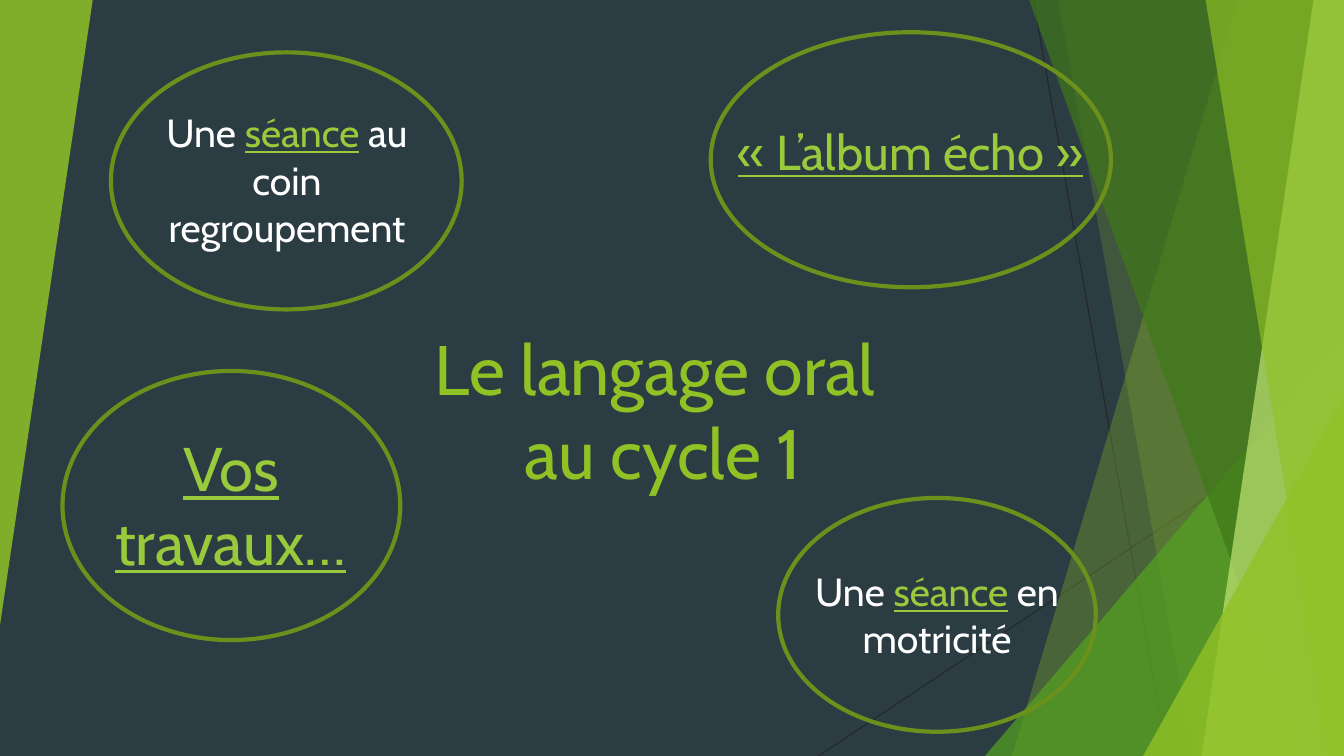
"""Build the slide on spoken language in cycle 1, with four themes around its title."""
from dataclasses import dataclass

from lxml import etree
from pptx import Presentation
from pptx import util as u
from pptx.dml.color import RGBColor
from pptx.enum import shapes, text
from pptx.oxml.ns import qn


@dataclass
class Theme:
    font: str = "Cabin"
    night: str = "2C3C43"
    lime: str = "90C226"
    pale: str = "C0E474"
    leaf: str = "54A021"
    forest: str = "3F7819"
    ring: str = "6B901C"
    link: str = "99CA3C"
    white: str = "FFFFFF"
    ray: str = "262626"
    title_size: int = 50
    works_size: int = 44
    album_size: int = 35
    session_size: int = 28


theme = Theme()
deck = Presentation()
deck.slide_width, deck.slide_height = u.Inches(13.33), u.Inches(7.5)
slide = deck.slides.add_slide(deck.slide_layouts[0])
slide.background.fill.solid()
slide.background.fill.fore_color.rgb = RGBColor.from_string(theme.night)


def place(*shares):
    """Turn percentages of the slide (x, y, x, y) into lengths."""
    sides = (deck.slide_width, deck.slide_height) * 2
    return [u.Emu(round(side * share / 100)) for side, share in zip(sides, shares)]


def tint(facet, color, opacity):
    """Give a facet a translucent fill and no outline."""
    facet.shadow.inherit = False
    facet.line.fill.background()
    facet.fill.solid()
    facet.fill.fore_color.rgb = RGBColor.from_string(color)
    color_node = facet.fill._xPr.find(qn("a:solidFill"))[0]
    etree.SubElement(color_node, qn("a:alpha")).set("val", str(opacity * 1000))


for ends in [(76.9, 0, 86.85, 100), (100, 53.73, 60.9, 100)]:
    ray = slide.shapes.add_connector(shapes.MSO_CONNECTOR.STRAIGHT, *place(*ends))
    ray.line.color.rgb = RGBColor.from_string(theme.ray)
    ray.line.width = u.Pt(0.75)
    etree.SubElement(ray._element.spPr, qn("a:effectLst"))

# Blades give their top and bottom x; peaks give left, top, width, height.
facets = [
    ((92.1, 75.3), theme.lime, 30),
    ((78.75, 88.73), theme.lime, 20),
    ((73.28, 44.4, 26.72, 55.6), theme.leaf, 72),
    ((76.58, 96.83), theme.forest, 70),
    ((97.73, 89.4), theme.pale, 70),
    ((89.7, 98.85), theme.lime, 65),
    ((85.05, 52.4, 14.95, 47.6), theme.lime, 80),
    ((0, 0, 6.9, 82.67), theme.lime, 85),
]
for outline, color, opacity in facets:
    if len(outline) == 2:
        top, bottom = outline
        blade = slide.shapes.build_freeform(*place(top, 0))
        blade.add_line_segments([place(100, 0), place(100, 100), place(bottom, 100)])
        facet = blade.convert_to_shape()
    else:
        facet = slide.shapes.add_shape(
            shapes.MSO_SHAPE.ISOSCELES_TRIANGLE, *place(*outline))
        facet.adjustments[0] = 1
        facet.rotation = 180 if outline[0] == 0 else 0
    tint(facet, color, opacity)

title, subtitle = slide.placeholders
subtitle._element.getparent().remove(subtitle._element)
slide.shapes._spTree.append(title._element)
title.left, title.top, title.width, title.height = place(29.78, 34.93, 37.95, 31.07)
title.text_frame.text = "Le langage oral\v au cycle 1"
title.text_frame.vertical_anchor = text.MSO_ANCHOR.BOTTOM
title.text_frame.auto_size = text.MSO_AUTO_SIZE.NONE
heading = title.text_frame.paragraphs[0]
heading.alignment = text.PP_ALIGN.CENTER
for run in heading.runs:
    run.font.name, run.font.size = theme.font, u.Pt(theme.title_size)
    run.font.color.rgb = RGBColor.from_string(theme.lime)

# Every second part between bars is underlined.
topics = [
    ("Une |séance| en motricité", theme.session_size,
     (57.9, 65.87, 23.63, 30.93), (57.45, 74.4, 24.53, 13.87)),
    ("|« L’album écho »", theme.album_size,
     (52.88, 4.27, 29.78, 33.73), (51.23, 15.47, 33, 9.2)),
    ("|Vos travaux…", theme.works_size,
     (4.65, 49.07, 25.13, 35.6), (6.98, 56.27, 20.4, 21.07)),
    ("Une |séance| au coin regroupement", theme.session_size,
     (8.25, 6.93, 26.1, 34), (10.88, 13.73, 20.93, 20.13)),
]
for wording, size, ring_area, topic_area in topics:
    ring = slide.shapes.add_shape(shapes.MSO_SHAPE.OVAL, *place(*ring_area))
    ring.shadow.inherit = False
    ring.fill.background()
    ring.line.color.rgb = RGBColor.from_string(theme.ring)
    ring.line.width = u.Pt(3)

    topic = slide.shapes.add_textbox(*place(*topic_area)).text_frame
    topic.word_wrap = True
    phrase = topic.paragraphs[0]
    phrase.alignment = text.PP_ALIGN.CENTER
    for index, part in enumerate(wording.split("|")):
        if part:
            linked = index % 2 == 1
            run = phrase.add_run()
            run.text = part
            run.font.name, run.font.size = theme.font, u.Pt(size)
            run.font.underline = linked
            run.font.color.rgb = RGBColor.from_string(
                theme.link if linked else theme.white)

deck.save("out.pptx")
